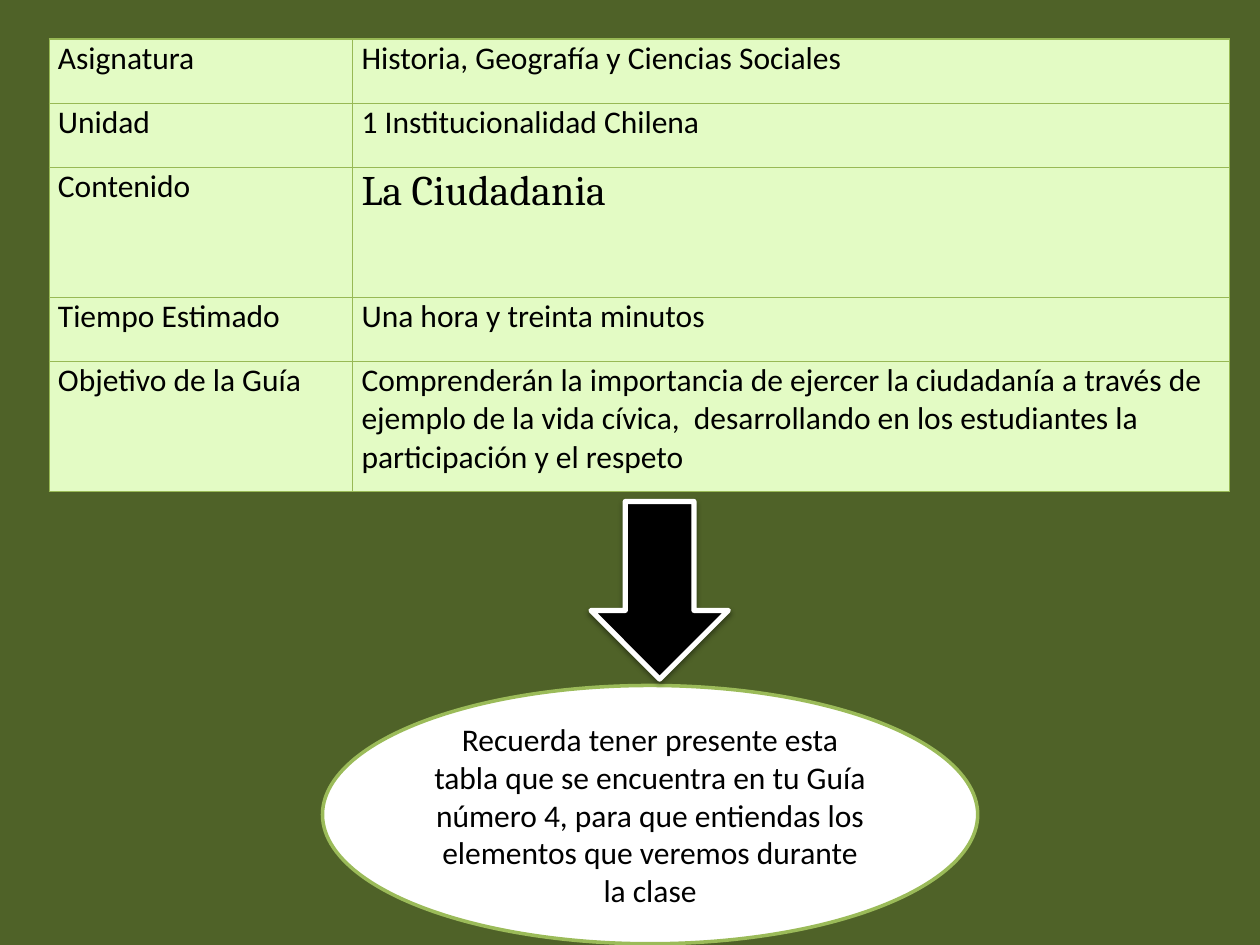
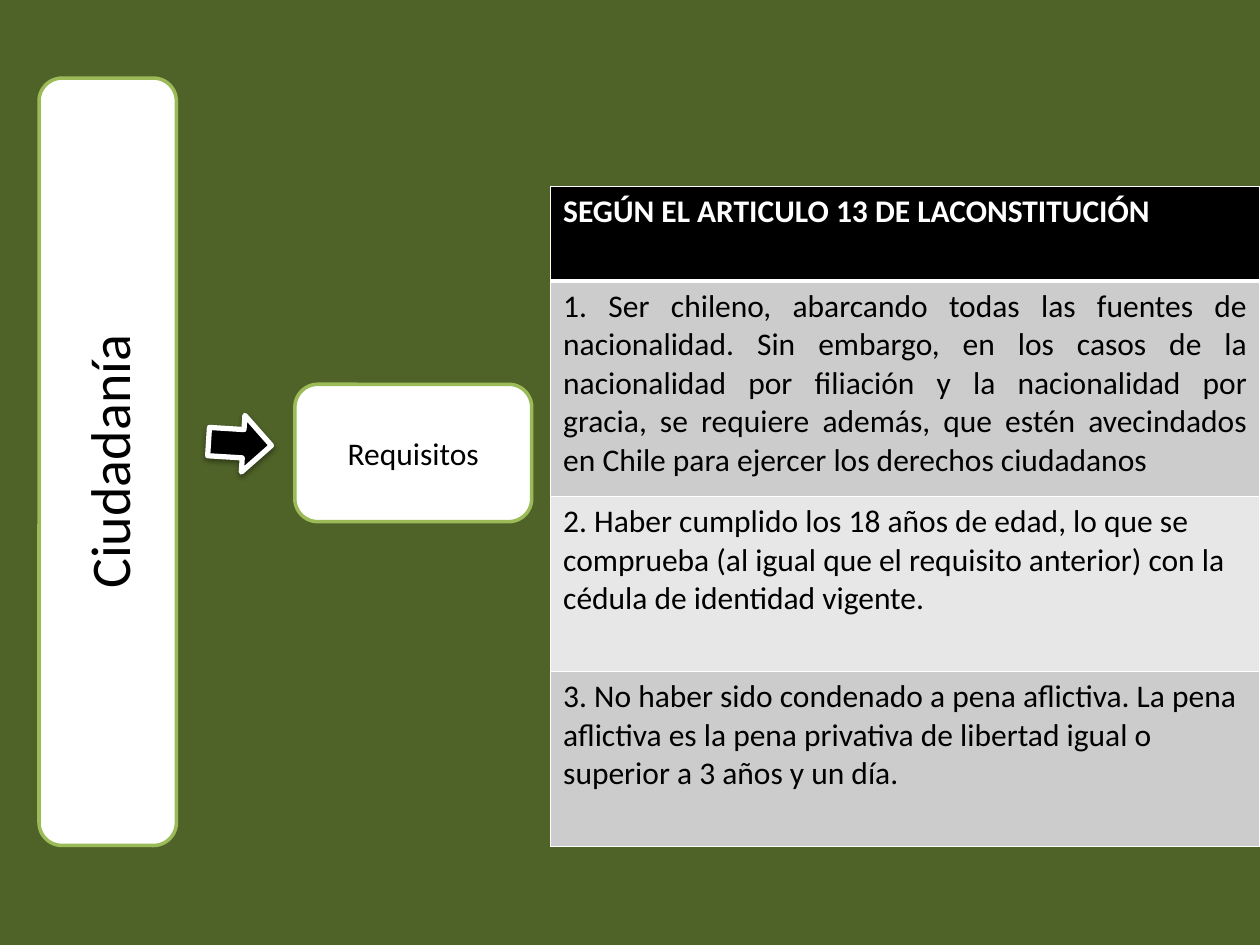
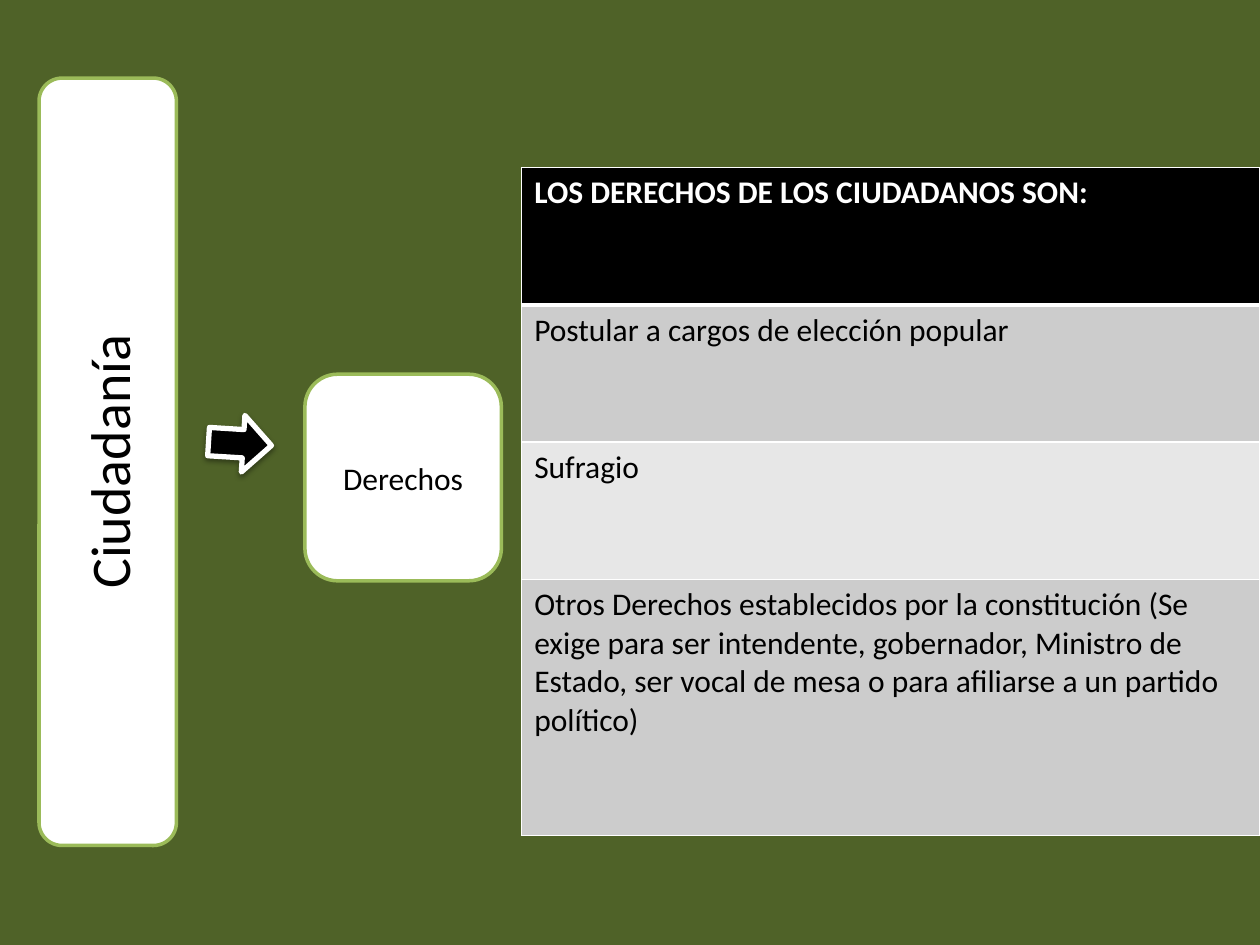
"""Build three slides about citizenship: guide summary, requirements and rights."""
from lxml import etree
from pptx import Presentation
from pptx import util as u
from pptx.dml.color import RGBColor
from pptx.enum import shapes, text
from pptx.oxml import parse_xml
from pptx.oxml.ns import nsdecls, qn

OLIVE = RGBColor(0x4F, 0x62, 0x28)
GREEN = RGBColor(0x9B, 0xBB, 0x59)
GRID = RGBColor(0x98, 0xB9, 0x55)
PALE = RGBColor(0xE3, 0xFB, 0xC4)
WHITE = RGBColor(0xFF, 0xFF, 0xFF)
BLACK = RGBColor(0x00, 0x00, 0x00)
GREY = RGBColor(0xCC, 0xCC, 0xCC)
LIGHT = RGBColor(0xE7, 0xE7, 0xE7)
SHADOW = (f'<a:outerShdw {nsdecls("a")} blurRad="39370" dist="20320" dir="5400000" rotWithShape="0">'
          '<a:srgbClr val="000000"><a:alpha val="38000"/></a:srgbClr></a:outerShdw>')


def add_box(s, kind, at, label="", size=18, rotation=0):
    """Add a white labelled shape, or a black shadowed arrow."""
    sp = s.shapes.add_shape(kind, *map(u.Inches, at))
    arrow = kind == shapes.MSO_SHAPE.DOWN_ARROW
    sp.rotation = rotation
    sp.shadow.inherit = False
    sp.fill.solid()
    sp.fill.fore_color.rgb = BLACK if arrow else WHITE
    sp.line.color.rgb = WHITE if arrow else GREEN
    sp.line.width = u.Pt(3 if arrow else 2)
    if arrow:
        sp.element.spPr.find(qn("a:effectLst")).append(parse_xml(SHADOW))
        return
    tf = sp.text_frame
    tf.word_wrap = True
    tf.vertical_anchor = text.MSO_ANCHOR.MIDDLE
    p = tf.paragraphs[0]
    p.alignment = text.PP_ALIGN.CENTER
    r = p.add_run()
    r.text = label
    r.font.size, r.font.name = u.Pt(size), "Calibri"
    r.font.color.rgb = BLACK


def add_grid(s, left, top, widths, heights, rows, fills, border, width, header=False):
    """Add a table with one fill per row and a uniform border."""
    frame = s.shapes.add_table(len(rows), len(widths), u.Inches(left), u.Inches(top),
                               u.Inches(sum(widths)), u.Inches(sum(heights)))
    table = frame.table
    table.first_row, table.horz_banding = header, False
    for column, w in zip(table.columns, widths):
        column.width = u.Inches(w)
    for i, (row, h) in enumerate(zip(rows, heights)):
        table.rows[i].height = u.Inches(h)
        for j, value in enumerate(row):
            cell = table.cell(i, j)
            tc_pr = cell._tc.get_or_add_tcPr()
            for side in "LRTB":
                thick = header and (i, side) in ((0, "B"), (1, "T"))
                ln = etree.SubElement(tc_pr, qn(f"a:ln{side}"), w=str(u.Pt(3 if thick else width)))
                fill = etree.SubElement(ln, qn("a:solidFill"))
                etree.SubElement(fill, qn("a:srgbClr"), val=str(border))
            cell.fill.solid()
            cell.fill.fore_color.rgb = fills[i]
            r = cell.text_frame.paragraphs[0].add_run()
            r.text = value
            r.font.size, r.font.name = u.Pt(18), "Calibri"
            r.font.bold = header and i == 0
            r.font.color.rgb = WHITE if header and i == 0 else BLACK
    return table


prs = Presentation()
prs.slide_width, prs.slide_height = u.Inches(10), u.Inches(7.5)
slides = [prs.slides.add_slide(prs.slide_layouts[6]) for _ in range(3)]
for s in slides:
    s.background.fill.solid()
    s.background.fill.fore_color.rgb = OLIVE

s = slides[0]
add_box(s, shapes.MSO_SHAPE.OVAL, (2.56, 5.44, 5.2, 2.05),
        "Recuerda tener presente esta tabla que se encuentra en tu Guía número 4, "
        "para que entiendas los elementos que veremos durante la clase")
guide = [
    ("Asignatura", "Historia, Geografía y Ciencias Sociales"),
    ("Unidad", "1 Institucionalidad Chilena"),
    ("Contenido", "La Ciudadania"),
    ("Tiempo Estimado", "Una hora y treinta minutos"),
    ("Objetivo de la Guía",
     "Comprenderán la importancia de ejercer la ciudadanía a través de ejemplo de la vida cívica,  "
     "desarrollando en los estudiantes la participación y el respeto"),
]
table = add_grid(s, 0.39, 0.31, [2.41, 6.96], [0.51, 0.51, 1.03, 0.51, 1.03],
                 guide, [PALE] * 5, GRID, 0.75)
for cell in table.iter_cells():
    cell.margin_left = cell.margin_right = u.Inches(0.07)
    cell.margin_top = cell.margin_bottom = 0
r = table.cell(2, 1).text_frame.paragraphs[0].runs[0]
r.font.size, r.font.name = u.Pt(24), "Cambria"
add_box(s, shapes.MSO_SHAPE.DOWN_ARROW, (4.69, 3.98, 1.09, 1.41))

topics = [
    ("Requisitos", (2.34, 3.05, 1.88, 1.09), 4.37, 1.48, [0.75, 1.71, 1.39, 1.39], [
        "SEGÚN EL ARTICULO 13 DE LACONSTITUCIÓN",
        "1. Ser chileno, abarcando todas las fuentes de nacionalidad. Sin embargo, en los casos de la "
        "nacionalidad por filiación y la nacionalidad por gracia, se requiere además, que estén "
        "avecindados en Chile para ejercer los derechos ciudadanos",
        "2. Haber cumplido los 18 años de edad, lo que se comprueba (al igual que el requisito anterior) "
        "con la cédula de identidad vigente.",
        "3. No haber sido condenado a pena aflictiva. La pena aflictiva es la pena privativa de libertad "
        "igual o superior a 3 años y un día.",
    ]),
    ("Derechos", (2.42, 2.97, 1.56, 1.64), 4.14, 1.33, [1.09, 1.09, 1.09, 2.03], [
        "LOS DERECHOS DE LOS CIUDADANOS SON:",
        "Postular a cargos de elección popular",
        "Sufragio",
        "Otros Derechos establecidos por la constitución (Se exige para ser intendente, gobernador, "
        "Ministro de Estado, ser vocal de mesa o para afiliarse a un partido político)",
    ]),
]
tables = []
for s, (topic, at, left, top, heights, lines) in zip(slides[1:], topics):
    add_box(s, shapes.MSO_SHAPE.ROUNDED_RECTANGLE, (-2.19, 3.12, 6.09, 1.09), "Ciudadanía", 32, 270)
    add_box(s, shapes.MSO_SHAPE.DOWN_ARROW, (1.68, 3.27, 0.45, 0.5), rotation=273.6)
    add_box(s, shapes.MSO_SHAPE.ROUNDED_RECTANGLE, at, topic)
    tables.append(add_grid(s, left, top, [10 - left], heights, [[line] for line in lines],
                           [BLACK, GREY, LIGHT, GREY], WHITE, 1, header=True))
tables[0].cell(1, 0).text_frame.paragraphs[0].alignment = text.PP_ALIGN.JUSTIFY

prs.save("out.pptx")
